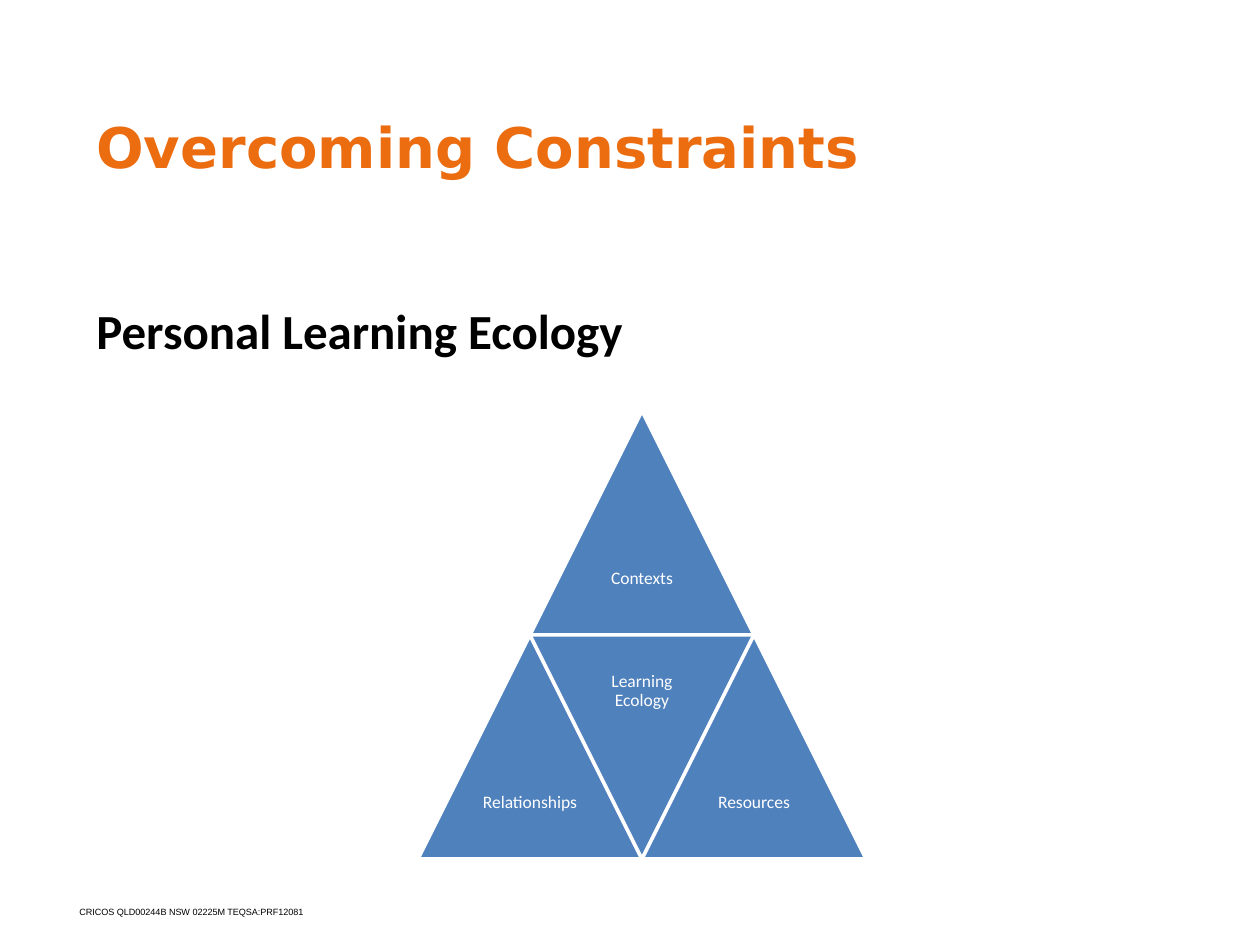
from pptx import Presentation
from pptx import util as u
from pptx.dml.color import RGBColor
from pptx.enum import shapes, text

WHITE = RGBColor(0xFF, 0xFF, 0xFF)
BLACK = RGBColor(0, 0, 0)
ORANGE = RGBColor(0xEC, 0x6C, 0x10)
BLUE = RGBColor(0x4F, 0x81, 0xBD)

FOOTER = "CRICOS QLD00244B NSW 02225M TEQSA:PRF12081"
TITLE = "Overcoming Constraints"
SUBTITLE = "Personal Learning Ecology"
ECOLOGY = [
    ("Contexts", 1, 0, False),
    ("Relationships", 0, 1, False),
    ("Learning Ecology", 1, 1, True),
    ("Resources", 2, 1, False),
]

PX_PER_INCH = 126
SIDE = 224
HALF = SIDE // 2
PYRAMID_LEFT, PYRAMID_TOP = 418, 411


def px(length):
    return u.Emu(round(length * u.Inches(1) / PX_PER_INCH))


def add_text(words, left, top, width, height, *, size, color, font="Calibri",
             bold=False, wrap=True, align=text.PP_ALIGN.LEFT,
             anchor=text.MSO_ANCHOR.TOP, inset=None, spacing=None, baseline=None):
    frame = slide.shapes.add_textbox(px(left), px(top), px(width), px(height)).text_frame
    frame.word_wrap = wrap
    frame.vertical_anchor = anchor
    if inset is not None:
        frame.margin_left = frame.margin_right = px(inset)
        frame.margin_top = frame.margin_bottom = px(inset)
    line = frame.paragraphs[0]
    line.alignment = align
    line.line_spacing = spacing
    run = line.add_run()
    run.text = words
    run.font.name = font
    run.font.size = u.Pt(size)
    run.font.bold = bold
    run.font.color.rgb = color
    if baseline is not None:
        run._r.get_or_add_rPr().set("baseline", str(baseline * 1000))


def add_triangle(left, top, inverted):
    triangle = slide.shapes.add_shape(
        shapes.MSO_SHAPE.ISOSCELES_TRIANGLE, px(left), px(top), px(SIDE), px(SIDE))
    triangle.shadow.inherit = False
    triangle.fill.solid()
    triangle.fill.fore_color.rgb = BLUE
    triangle.line.color.rgb = WHITE
    triangle.line.width = u.Pt(2)
    triangle.rotation = 180 if inverted else 0


deck = Presentation()
deck.slide_width, deck.slide_height = u.Inches(10), u.Inches(7.5)
slide = deck.slides.add_slide(deck.slide_layouts[6])

add_text(FOOTER, 67, 898, 344, 25, size=9, color=BLACK, font="Arial",
         wrap=False, baseline=30)
add_text(TITLE, 84, 106, 843, 134, size=32, color=ORANGE, font="DejaVu Sans", bold=True)
add_text(SUBTITLE, 84, 294, 1091, 610, size=28, color=BLACK, bold=True)

for label, column, row, inverted in ECOLOGY:
    left = PYRAMID_LEFT + column * HALF
    top = PYRAMID_TOP + row * SIDE
    add_triangle(left, top, inverted)
    add_text(label, left + HALF // 2, top if inverted else top + HALF, HALF, HALF,
             size=10, color=WHITE, align=text.PP_ALIGN.CENTER,
             anchor=text.MSO_ANCHOR.MIDDLE, inset=5, spacing=0.9)

deck.save("out.pptx")
